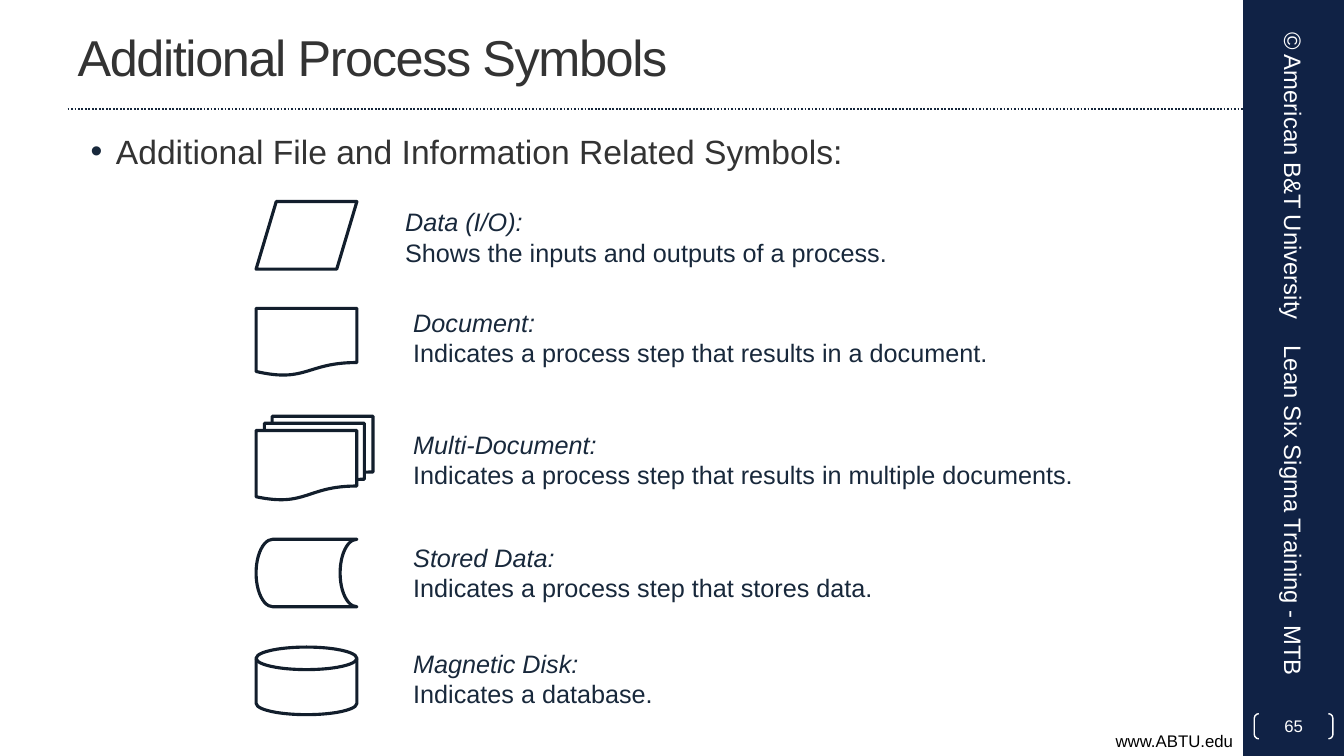
import pptx
import pptx.util
import pptx.dml.color
import pptx.enum.dml
import pptx.enum.shapes
import pptx.enum.text
import pptx.oxml
import pptx.oxml.ns

Inches = pptx.util.Inches
Pt = pptx.util.Pt
RGBColor = pptx.dml.color.RGBColor
Shape = pptx.enum.shapes.MSO_SHAPE
Align = pptx.enum.text.PP_ALIGN
Anchor = pptx.enum.text.MSO_ANCHOR
AutoSize = pptx.enum.text.MSO_AUTO_SIZE

NAVY = RGBColor(0x10, 0x22, 0x45)
RULE = RGBColor(0x17, 0x27, 0x3B)
OUTLINE = RGBColor(0x12, 0x1E, 0x2C)
INK = RGBColor(0x18, 0x28, 0x3B)
GREY = RGBColor(0x33, 0x33, 0x33)
BLACK = RGBColor(0, 0, 0)
WHITE = RGBColor(0xFF, 0xFF, 0xFF)

SYMBOLS = [
    (Shape.FLOWCHART_DATA, (2.54, 2, 1, 0.67), (3.92, 2, 7, 0.71),
     "Data (I/O):", "Shows the inputs and outputs of a process."),
    (Shape.FLOWCHART_DOCUMENT, (2.54, 3.06, 1, 0.67), (4, 3, 6.92, 0.71),
     "Document:", "Indicates a process step that results in a document."),
    (Shape.FLOWCHART_MULTIDOCUMENT, (2.54, 4.13, 1.16, 0.83), (4, 4.21, 6.92, 0.71),
     "Multi-Document:", "Indicates a process step that results in multiple documents."),
    (Shape.FLOWCHART_STORED_DATA, (2.54, 5.35, 1, 0.67), (4, 5.33, 6.92, 0.71),
     "Stored Data:", "Indicates a process step that stores data."),
    (Shape.FLOWCHART_MAGNETIC_DISK, (2.54, 6.42, 1, 0.67), (4, 6.38, 6.92, 0.71),
     "Magnetic Disk:", "Indicates a database."),
]


def inches(box):
    return [Inches(length) for length in box]


def add_span(para, text, size, color, italic=False):
    span = para.add_run()
    span.text = text
    span.font.name = "Arial"
    span.font.size = Pt(size)
    span.font.color.rgb = color
    span.font.italic = italic
    return span


def add_text(page, box, lines, size, color, align=Align.LEFT, anchor=Anchor.TOP):
    label = page.shapes.add_textbox(*inches(box))
    frame = label.text_frame
    frame.word_wrap = True
    frame.vertical_anchor = anchor
    for index, (text, italic) in enumerate(lines):
        para = frame.add_paragraph() if index else frame.paragraphs[0]
        para.alignment = align
        add_span(para, text, size, color, italic)
    return label


def add_outline(page, kind, box, color, width):
    shape = page.shapes.add_shape(kind, *inches(box))
    shape.shadow.inherit = False
    shape.fill.background()
    shape.line.color.rgb = color
    shape.line.width = Pt(width)
    return shape


def place_placeholder(holder, box, anchor):
    holder.left, holder.top, holder.width, holder.height = inches(box)
    frame = holder.text_frame
    frame.word_wrap = True
    frame.auto_size = AutoSize.NONE
    frame.vertical_anchor = anchor
    para = frame.paragraphs[0]
    para.alignment = Align.LEFT
    para.space_before = Pt(0)
    return para


def add_heading(page, box):
    left, top, width, height = box
    para = place_placeholder(page.shapes.title, box, Anchor.MIDDLE)
    span = add_span(para, "Additional Process Symbols", 36, GREY)
    span.font._element.set("spc", "-100")
    bottom = Inches(top + height)
    rule = page.shapes.add_connector(
        pptx.enum.shapes.MSO_CONNECTOR.STRAIGHT, Inches(left), bottom, Inches(12.33), bottom)
    rule.line.color.rgb = RULE
    rule.line.width = Pt(1.25)
    rule.line.dash_style = pptx.enum.dml.MSO_LINE.ROUND_DOT
    rule._element.spPr.append(pptx.oxml.parse_xml(
        "<a:effectLst %s/>" % pptx.oxml.ns.nsdecls("a")))


def add_bullet(page, box):
    para = place_placeholder(page.placeholders[1], box, Anchor.TOP)
    properties = para._p.get_or_add_pPr()
    properties.set("marL", str(Inches(0.38)))
    properties.set("indent", str(Inches(-0.25)))
    namespace = pptx.oxml.ns.nsdecls("a")
    for markup in (
        f'<a:buClr {namespace}><a:srgbClr val="{INK}"/></a:buClr>',
        f'<a:buFont {namespace} typeface="Arial"/>',
        f'<a:buChar {namespace} char="•"/>',
    ):
        properties.append(pptx.oxml.parse_xml(markup))
    add_span(para, "Additional File and Information Related Symbols:", 24, GREY)


def add_sidebar(page, box):
    left, top, width, height = box
    band = add_outline(page, Shape.RECTANGLE, box, NAVY, 1)
    band.fill.solid()
    band.fill.fore_color.rgb = NAVY
    band.line.fill.background()
    center = left + width / 2
    for text, middle, length, align in (
        ("© American B&T University", 1.75, 3.17, Align.CENTER),
        ("Lean Six Sigma Training - MTB", 5.17, 3.67, Align.LEFT),
    ):
        label_box = (center - length / 2, top + middle - 0.27, length, 0.53)
        label = add_text(page, label_box, [(text, False)], 17, WHITE, align, Anchor.MIDDLE)
        label.rotation = 90
    number = add_outline(
        page, Shape.DOUBLE_BRACKET, (left + 0.11, top + height - 0.42, 0.78, 0.25), WHITE, 1)
    number.adjustments[0] = 0.18
    frame = number.text_frame
    frame.margin_left = frame.margin_right = frame.margin_top = frame.margin_bottom = 0
    frame.vertical_anchor = Anchor.MIDDLE
    frame.paragraphs[0].alignment = Align.CENTER
    add_span(frame.paragraphs[0], "65", 12, WHITE)


def add_symbol(page, kind, symbol_box, text_box, name, meaning):
    add_outline(page, kind, symbol_box, OUTLINE, 2.25)
    add_text(page, text_box, [(name, True), (meaning, False)], 18, INK)


def main():
    deck = pptx.Presentation()
    deck.slide_width = Inches(13.33)
    deck.slide_height = Inches(7.5)
    page = deck.slides.add_slide(deck.slide_layouts[1])
    add_sidebar(page, (12.33, 0, 1, 7.5))
    add_heading(page, (0.67, 0.03, 11.11, 1.05))
    add_bullet(page, (0.67, 1.25, 11.11, 6))
    for symbol in SYMBOLS:
        add_symbol(page, *symbol)
    add_text(page, (0, 7.2, 12.33, 0.3), [("www.ABTU.edu", False)], 12, BLACK, Align.RIGHT)
    deck.save("out.pptx")


if __name__ == "__main__":
    main()
